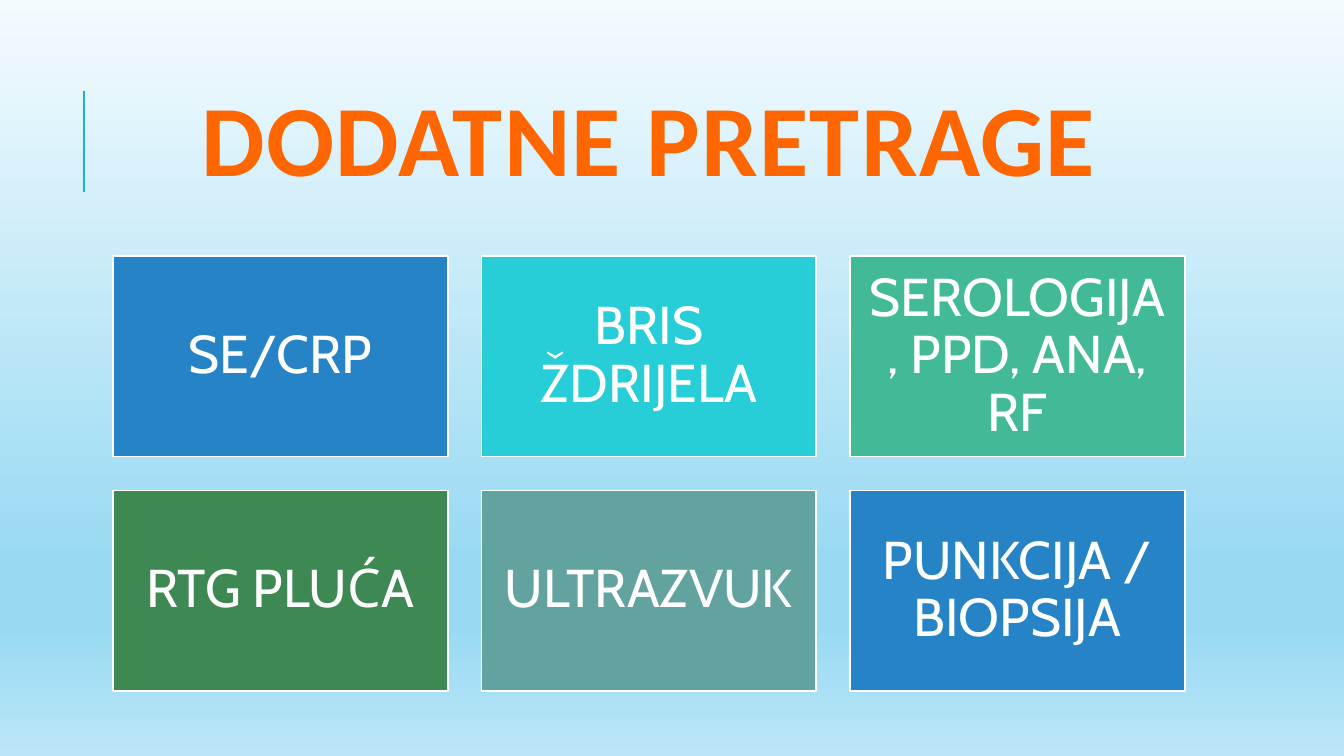
"""Build the slide listing additional diagnostic tests as a grid of six tiles."""
from lxml.etree import SubElement
from pptx import Presentation
from pptx.dml.color import RGBColor
from pptx.enum.shapes import MSO_CONNECTOR, MSO_SHAPE
from pptx.enum.text import MSO_ANCHOR, PP_ALIGN
from pptx.oxml.ns import qn
from pptx.util import Inches, Pt

WHITE = RGBColor(0xFF, 0xFF, 0xFF)
ORANGE = RGBColor(0xFF, 0x66, 0x00)
SKY = RGBColor(0x1C, 0xAD, 0xE4)
BLUE = RGBColor(0x26, 0x83, 0xC6)
CYAN = RGBColor(0x27, 0xCE, 0xD7)
MINT = RGBColor(0x42, 0xBA, 0x97)
GREEN = RGBColor(0x3E, 0x88, 0x53)
TEAL = RGBColor(0x62, 0xA3, 0x9F)
PALE = RGBColor(0xF4, 0xFB, 0xFE)
LIGHT = RGBColor(0x99, 0xDA, 0xF3)
SOFT = RGBColor(0xBB, 0xE6, 0xF7)

BACKGROUND_STOPS = [(0, PALE), (74, LIGHT), (83, LIGHT), (100, SOFT)]
TESTS = [
    ("SE/CRP", BLUE),
    ("BRIS ŽDRIJELA", CYAN),
    ("SEROLOGIJA, PPD, ANA, RF", MINT),
    ("RTG PLUĆA", GREEN),
    ("ULTRAZVUK", TEAL),
    ("PUNKCIJA / BIOPSIJA", BLUE),
]
COLUMNS = 3
LEFT, TOP = 1.12, 2.54
TILE_WIDTH, TILE_HEIGHT = 3.32, 1.99
GAP = 0.335


def write_text(shape, text, font, size, color, bold=False, line_spacing=0.9,
               inset_x=0.16, inset_y=0.16, tracking=0):
    """Put centred, formatted text in a shape."""
    frame = shape.text_frame
    frame.word_wrap = True
    frame.vertical_anchor = MSO_ANCHOR.MIDDLE
    frame.margin_left = frame.margin_right = Inches(inset_x)
    frame.margin_top = frame.margin_bottom = Inches(inset_y)
    paragraph = frame.paragraphs[0]
    paragraph.alignment = PP_ALIGN.CENTER
    paragraph.line_spacing = line_spacing
    run = paragraph.add_run()
    run.text = text
    run.font.name = font
    run.font.size = Pt(size)
    run.font.bold = bold
    run.font.color.rgb = color
    if tracking:
        run.font._element.set("spc", str(tracking * 100))


prs = Presentation()
prs.slide_width, prs.slide_height = Inches(13.33), Inches(7.5)
slide = prs.slides.add_slide(prs.slide_layouts[6])

background = slide.background.fill
background.gradient()
background.gradient_angle = 270
stop_list = slide.background._cSld.find(".//" + qn("a:gsLst"))
for default_stop in list(stop_list):
    stop_list.remove(default_stop)
for percent, color in BACKGROUND_STOPS:
    stop = SubElement(stop_list, qn("a:gs"), pos=str(percent * 1000))
    SubElement(stop, qn("a:srgbClr"), val=str(color))

accent = slide.shapes.add_connector(
    MSO_CONNECTOR.STRAIGHT, Inches(0.83), Inches(1.9), Inches(0.83), Inches(0.9))
accent.line.color.rgb = SKY
accent.line.width = Pt(1.5)
SubElement(accent._element.spPr, qn("a:effectLst"))

title = slide.shapes.add_textbox(Inches(LEFT), Inches(0.64), Inches(10.63), Inches(1.64))
write_text(title, "DODATNE PRETRAGE", font="Calibri", size=72, color=ORANGE, bold=True,
           line_spacing=0.8, inset_x=0.1, inset_y=0.05, tracking=1)

for index, (test, color) in enumerate(TESTS):
    row, column = divmod(index, COLUMNS)
    tile = slide.shapes.add_shape(
        MSO_SHAPE.RECTANGLE,
        Inches(LEFT + column * (TILE_WIDTH + GAP)),
        Inches(TOP + row * (TILE_HEIGHT + GAP)),
        Inches(TILE_WIDTH), Inches(TILE_HEIGHT))
    tile.shadow.inherit = False
    tile.fill.solid()
    tile.fill.fore_color.rgb = color
    tile.line.color.rgb = WHITE
    tile.line.width = Pt(1.25)
    write_text(tile, test, font="Cabin", size=38, color=WHITE)

prs.save("out.pptx")
